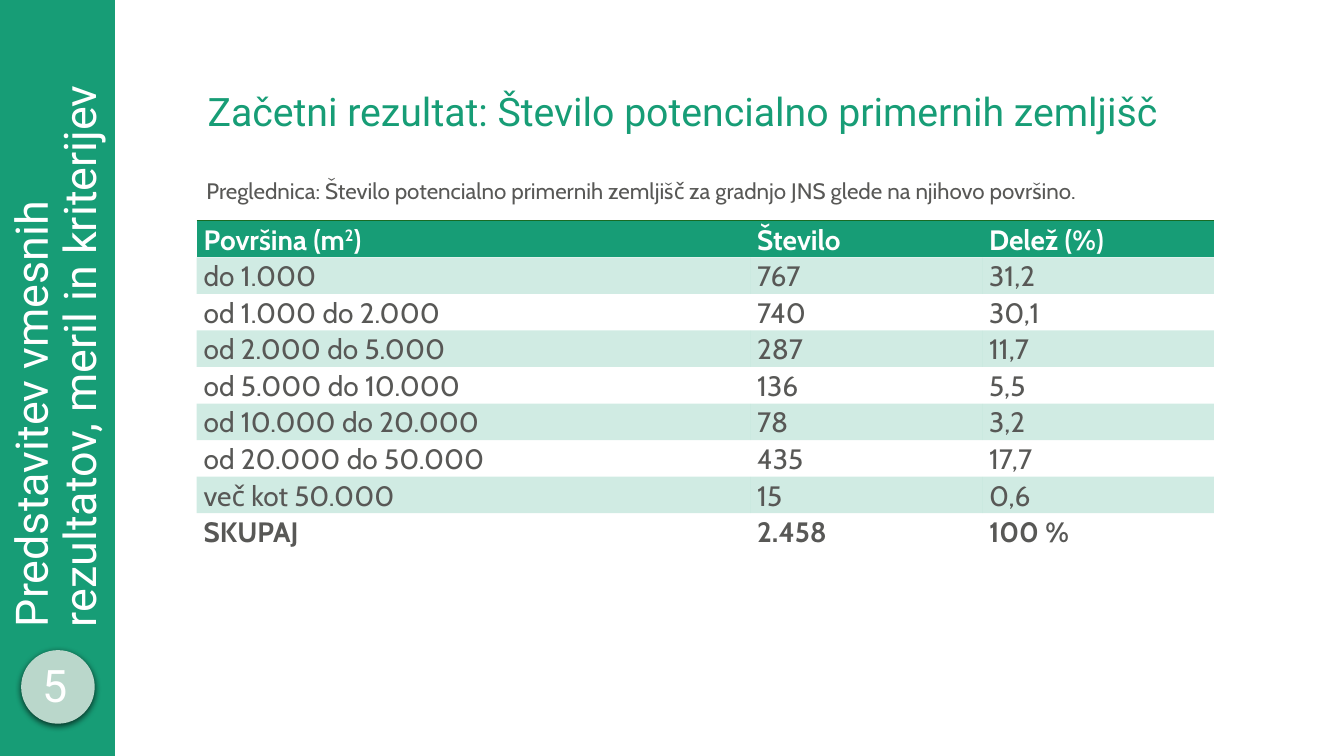
from lxml import etree
from pptx import Presentation
from pptx.dml.color import RGBColor
from pptx.enum import shapes, text
from pptx.oxml import ns
from pptx.util import Inches, Pt

GREEN = RGBColor(0x17, 0x9D, 0x76)
MINT = RGBColor(0xBA, 0xD7, 0xCB)
GREY = RGBColor(0x58, 0x58, 0x56)
WHITE = RGBColor(0xFF, 0xFF, 0xFF)
DARK = RGBColor(0x19, 0x6B, 0x24)
BLACK = RGBColor(0, 0, 0)
HEAD, BODY = "Roboto", "Cabin"
PLAIN = "{2D5ABB26-0587-4C30-8999-92F81FD0307C}"  # no style, no grid

ROWS = [
    ("Površina (m2)", "Število", "Delež (%)"),
    ("do 1.000", "767", "31,2"),
    ("od 1.000 do 2.000", "740", "30,1"),
    ("od 2.000 do 5.000", "287", "11,7"),
    ("od 5.000 do 10.000", "136", "5,5"),
    ("od 10.000 do 20.000", "78", "3,2"),
    ("od 20.000 do 50.000", "435", "17,7"),
    ("več kot 50.000", "15", "0,6"),
    ("SKUPAJ", "2.458", "100 %"),
]


def sub(node, tag, **attrs):
    return etree.SubElement(node, ns.qn(tag), attrs)


class Page:
    def __init__(self, deck):
        self.slide = deck.slides.add_slide(deck.slide_layouts[5])
        self.items = self.slide.shapes

    def style(self, run, font, size, color, bold=False):
        run.font.name, run.font.size = font, Pt(size)
        run.font.bold, run.font.color.rgb = bold, color

    def fill(self, frame, words, font, size, color, align=text.PP_ALIGN.LEFT,
             anchor=text.MSO_ANCHOR.MIDDLE, space=0.9):
        frame.word_wrap, frame.vertical_anchor = True, anchor
        frame.auto_size = text.MSO_AUTO_SIZE.NONE
        frame.text = words
        para = frame.paragraphs[0]
        para.alignment, para.line_spacing = align, space
        self.style(para.runs[0], font, size, color)

    def title(self, words, box):
        item = self.items.title
        item.left, item.top, item.width, item.height = map(Inches, box)
        self.fill(item.text_frame, words, HEAD, 28, GREEN)

    def label(self, words, box, font, size, color, turn=0, **look):
        item = self.items.add_textbox(*map(Inches, box))
        item.rotation = turn
        self.fill(item.text_frame, words, font, size, color, **look)

    def shape(self, kind, box, color, shade=False):
        item = self.items.add_shape(kind, *map(Inches, box))
        item.fill.solid()
        item.fill.fore_color.rgb = color
        item.line.fill.background()
        item.shadow.inherit = False
        if shade:
            effect = item._element.spPr.find(ns.qn("a:effectLst"))
            outer = sub(effect, "a:outerShdw", blurRad=str(Pt(4.5)),
                        dist=str(Pt(1.5)), dir="5400000", algn="ctr")
            tone = sub(outer, "a:srgbClr", val=str(BLACK))
            sub(tone, "a:alpha", val="63000")

    def cell(self, cell, words, color, bold):
        cell.margin_left = cell.margin_right = Inches(0.07)
        cell.margin_top = cell.margin_bottom = 0
        para = cell.text_frame.paragraphs[0]
        para.line_spacing, para.space_after = 1.07, Pt(8)
        # The power in a unit stands raised
        parts = words.partition("2)") if words.endswith("m2)") else (words,)
        if len(parts) > 1:
            parts = (parts[0], "2", ")")
        for n, part in enumerate(parts):
            run = para.add_run()
            run.text = part
            self.style(run, BODY, 20, color, bold)
            if n == 1:
                run._r.get_or_add_rPr().set("baseline", "30000")

    def edge(self, cell):
        line = etree.Element(ns.qn("a:lnT"), w=str(Pt(1)))
        sub(sub(line, "a:solidFill"), "a:srgbClr", val=str(DARK))
        cell._tc.get_or_add_tcPr().insert(0, line)

    def table(self, rows, box, widths):
        frame = self.items.add_table(len(rows), len(widths), *map(Inches, box))
        grid = frame.table
        grid.horz_banding = grid.first_row = False
        grid._tbl.tblPr.find(ns.qn("a:tableStyleId")).text = PLAIN
        for col, width in zip(grid.columns, widths):
            col.width = Inches(width)
        for r, row in enumerate(rows):
            top, last = r == 0, r == len(rows) - 1
            for c, words in enumerate(row):
                cell = grid.cell(r, c)
                self.cell(cell, words, WHITE if top else GREY, top or last)
                if top or r % 2:
                    cell.fill.solid()
                    cell.fill.fore_color.rgb = GREEN
                else:
                    cell.fill.background()
                if top:
                    self.edge(cell)
                elif r % 2:
                    tone = cell._tc.tcPr.find(".//" + ns.qn("a:srgbClr"))
                    sub(tone, "a:alpha", val="20000")


def main():
    deck = Presentation()
    deck.slide_width, deck.slide_height = Inches(13.33), Inches(7.5)
    page = Page(deck)

    # Title
    page.title("Začetni rezultat: Število potencialno primernih zemljišč",
               (1.96, 0.4, 10.46, 1.45))

    # Side band with section name and number
    page.shape(shapes.MSO_SHAPE.RECTANGLE, (0, 0, 1.14, 7.5), GREEN)
    page.label("Predstavitev vmesnih rezultatov, meril in kriterijev",
               (-2.59, 2.59, 6.32, 1.14), HEAD, 32, WHITE, turn=270)
    page.shape(shapes.MSO_SHAPE.OVAL, (0.21, 6.45, 0.73, 0.73), MINT, True)
    page.label("5", (0.18, 6.47, 0.74, 0.64), HEAD, 32, WHITE,
               align=text.PP_ALIGN.CENTER, space=1.0)

    # Caption and table
    page.label("Preglednica: Število potencialno primernih zemljišč za "
               "gradnjo JNS glede na njihovo površino.",
               (1.95, 1.74, 10.46, 0.34), BODY, 16, GREY,
               anchor=text.MSO_ANCHOR.TOP)
    page.table(ROWS, (1.95, 2.19, 10.09, 3.22), (5.49, 2.3, 2.3))

    deck.save("out.pptx")


if __name__ == "__main__":
    main()
